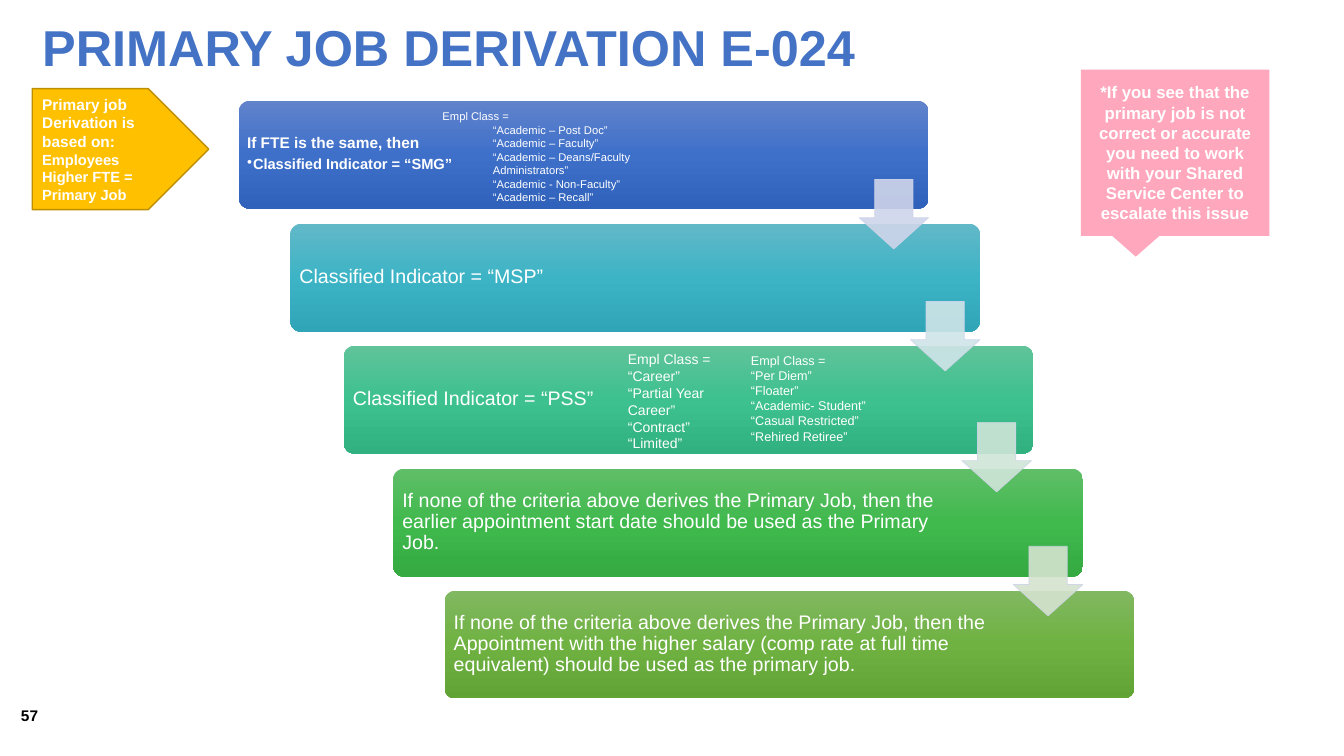
from copy import deepcopy

from pptx import Presentation
from pptx.dml.color import RGBColor
from pptx.enum.shapes import MSO_SHAPE
from pptx.enum.text import MSO_ANCHOR, MSO_AUTO_SIZE, PP_ALIGN
from pptx.oxml.ns import qn
from pptx.util import Pt

ROUND, DOWN = MSO_SHAPE.ROUNDED_RECTANGLE, MSO_SHAPE.DOWN_ARROW
PLATE, CALL = MSO_SHAPE.PENTAGON, MSO_SHAPE.RECTANGULAR_CALLOUT
TOP, MIDDLE = MSO_ANCHOR.TOP, MSO_ANCHOR.MIDDLE
LEFT, CENTER = PP_ALIGN.LEFT, PP_ALIGN.CENTER
GROW = MSO_AUTO_SIZE.SHAPE_TO_FIT_TEXT

PX = 9144  # 100 px to the inch
FONT = "Arial"
WHITE = RGBColor(255, 255, 255)
BLACK = RGBColor(0, 0, 0)
BLUE = RGBColor(0x44, 0x72, 0xC4)
GOLD = RGBColor(0xFF, 0xC0, 0x00)
BRONZE = RGBColor(0xBD, 0x8E, 0x00)
PINK = RGBColor(0xFF, 0xA7, 0xBC)
EDGE = RGBColor(0xCF, 0xD5, 0xEA)

# Content: paragraphs are (text, size, left indent)
TITLE = [("PRIMARY JOB DERIVATION E-024", 36, 0)]
PAGE = [("57", 11, 0)]
BASIS = [
    ("Primary job Derivation is based on:", 11, 0),
    ("Employees Higher FTE = Primary Job", 10.5, 0),
]
ADVICE = [(
    "*If you see that the primary job is not correct or accurate you need "
    "to work with your Shared Service Center to escalate this issue", 12, 0)]

# Steps: left, gradient, paragraphs
STEPS = [
    (237, ("6183CB", "3E70CA", "3062BB"),
     [("If FTE is the same, then", 11, 0),
      ("Classified Indicator = “SMG”", 10.5, 6)]),
    (288, ("61B8C7", "3DB4C6", "30A5B7"),
     [("Classified Indicator = “MSP”", 14, 0)]),
    (341, ("60C39A", "3DC18F", "31B080"),
     [("Classified Indicator = “PSS”", 14, 0)]),
    (390, ("60BE68", "40B94D", "34AA41"),
     [("If none of the criteria above derives the Primary Job, then the "
       "earlier appointment start date should be used as the Primary Job.",
       14, 0)]),
    (441, ("81B861", "6FB242", "62A336"),
     [("If none of the criteria above derives the Primary Job, then the "
       "Appointment with the higher salary (comp rate at full time "
       "equivalent) should be used as the primary job.", 14, 0)]),
]

# Arrows: top, fill
ARROWS = [(178, "CFD5EA"), (299, "CFE5E8"), (419, "CFE5D8"), (542, "D5E3CF")]

# Employee classes: box, size, indent, names
HEAD = "Empl Class ="
CLASSES = [
    ((429, 104, 246, 104), 8, 50,
     ["“Academic – Post Doc”", "“Academic – Faculty”",
      "“Academic – Deans/Faculty Administrators”",
      "“Academic - Non-Faculty”", "“Academic – Recall”"]),
    ((613, 343, 143, 111), 10, 0,
     ["“Career”", "“Partial Year Career”", "“Contract”", "“Limited”"]),
    ((735, 345, 143, 101), 9, 0,
     ["“Per Diem”", "“Floater”", "“Academic- Student”",
      "“Casual Restricted”", "“Rehired Retiree”"]),
]

deck = Presentation()
deck.slide_width, deck.slide_height = 1333 * PX, 750 * PX
slide = deck.slides.add_slide(deck.slide_layouts[6])


def place(box):
    return [side * PX for side in box]


def put(item, values):
    for key, value in values.items():
        setattr(item, key, value)


def write(shape, paras, color=WHITE, bold=False, anchor=MIDDLE, align=LEFT):
    frame = shape.text_frame
    put(frame, {"word_wrap": True, "vertical_anchor": anchor})
    for i, (text, size, indent) in enumerate(paras):
        para = frame.add_paragraph() if i else frame.paragraphs[0]
        para.alignment = align
        run = para.add_run()
        run.text = text
        put(run.font, {"name": FONT, "size": Pt(size), "bold": bold})
        run.font.color.rgb = color
        if indent:
            para._p.get_or_add_pPr().set("marL", str(indent * PX))
    return frame


def label(box, paras, **style):
    return write(slide.shapes.add_textbox(*place(box)), paras, **style)


def draw(kind, box, adjust=()):
    shape = slide.shapes.add_shape(kind, *place(box))
    shape.shadow.inherit = False
    shape.line.fill.background()
    for i, value in enumerate(adjust):
        shape.adjustments[i] = value
    return shape


def solid(fill, color):
    fill.solid()
    fill.fore_color.rgb = color


def blend(shape, colors):
    fill = shape.fill
    fill.gradient()
    fill.gradient_angle = 270
    stops = shape._element.spPr.find(".//" + qn("a:gsLst"))
    stops.append(deepcopy(stops[-1]))
    for stop, at, color in zip(fill.gradient_stops, (0, 0.5, 1), colors):
        stop.position = at
        stop.color.rgb = RGBColor.from_string(color)


# Title
label((32, 8, 1199, 75), TITLE, color=BLUE, bold=True)

# Staircase of steps
for i, (left, colors, paras) in enumerate(STEPS):
    top = int(100 + 121.5 * i + 0.5)
    blend(draw(ROUND, (left, top, 684, 107), [0.1]), colors)
    frame = label((left + 3, top + 3, 558, 100), paras, bold=i == 0)
    inset = (6 if i else 5) * PX
    put(frame, {"margin_" + side: inset
                for side in ("left", "right", "top", "bottom")})
    for para, (text, size, indent) in zip(frame.paragraphs, paras):
        share = 0.15 if indent else 0.35
        put(para, {"line_spacing": 0.9, "space_after": Pt(size * share)})
        if indent:
            props = para._p.get_or_add_pPr()
            props.set("indent", str(-indent * PX))
            bullet = props.makeelement(qn("a:buChar"), {"char": "•"})
            props.append(bullet)

# Arrows between steps
for i, (top, color) in enumerate(ARROWS):
    arrow = draw(DOWN, (852 + 51 * i, top, 69, 69), [0.55, 0.45])
    solid(arrow.fill, RGBColor.from_string(color))
    solid(arrow.line.fill, EDGE)
    arrow.line.width = Pt(0.5)
    for tint in arrow._element.spPr.iter(qn("a:srgbClr")):
        tint.append(tint.makeelement(qn("a:alpha"), {"val": "90000"}))

# Employee classes
for box, size, indent, names in CLASSES:
    paras = [(HEAD, size, 0)] + [(name, size, indent) for name in names]
    label(box, paras, anchor=TOP).auto_size = GROW

# Basis and advice
basis = draw(PLATE, (32, 88, 175, 120))
solid(basis.fill, GOLD)
solid(basis.line.fill, BRONZE)
basis.line.width = Pt(1)
write(basis, BASIS, bold=True)

advice = draw(CALL, (1072, 69, 187, 165))
solid(advice.fill, PINK)
write(advice, ADVICE, bold=True, align=CENTER)

# Page number
label((11, 693, 311, 33), PAGE, color=BLACK, bold=True)

deck.save("out.pptx")
